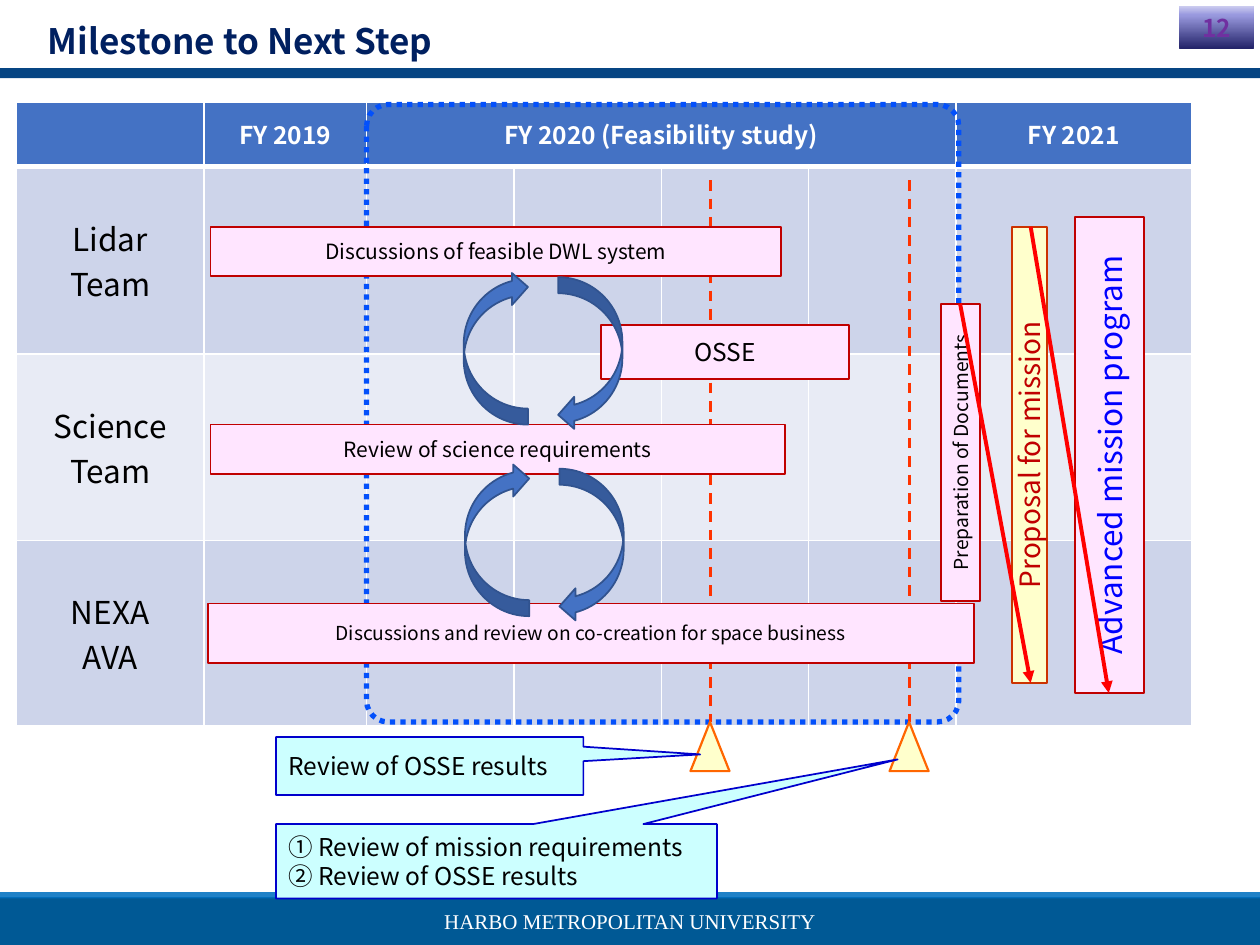
from copy import deepcopy

from pptx import Presentation
from pptx.dml.color import RGBColor
from pptx.enum.dml import MSO_LINE
from pptx.enum.shapes import MSO_CONNECTOR, MSO_SHAPE
from pptx.enum.text import MSO_ANCHOR, PP_ALIGN
from pptx.oxml.ns import qn
from pptx.oxml.xmlchemy import OxmlElement
from pptx.util import Inches, Pt

RECT, ROUNDED = MSO_SHAPE.RECTANGLE, MSO_SHAPE.ROUNDED_RECTANGLE
TRIANGLE, CALLOUT = MSO_SHAPE.ISOSCELES_TRIANGLE, MSO_SHAPE.RECTANGULAR_CALLOUT
TURN = MSO_SHAPE.CURVED_LEFT_ARROW
STRAIGHT = MSO_CONNECTOR.STRAIGHT
DASH, DOT = MSO_LINE.DASH, MSO_LINE.ROUND_DOT
LEFT, CENTER = PP_ALIGN.LEFT, PP_ALIGN.CENTER
MIDDLE, BOTTOM = MSO_ANCHOR.MIDDLE, MSO_ANCHOR.BOTTOM
SANS, SERIF = "Noto Sans CJK JP", "Times New Roman"
PINK, CREAM, BLUE, CRIMSON = "FFE5FF", "FFFFCC", "4472C4", "C00000"
COLUMNS = [1.49, 1.29, 1.17, 1.17, 1.17, 1.17, 1.87]
ROWS = [0.51, 1.49, 1.48, 1.47]


def rgb(value):
    return RGBColor.from_string(value)


def child(parent, tag, **attributes):
    element = OxmlElement(tag)
    for key, value in attributes.items():
        element.set(key, str(value))
    parent.append(element)
    return element


def write(frame, text, size, color, bold=False, align=CENTER, font=SANS):
    frame.text = text
    for paragraph in frame.paragraphs:
        paragraph.alignment = align
        for run in paragraph.runs:
            run.font.name, run.font.size, run.font.bold = font, Pt(size), bold
            run.font.color.rgb = rgb(color)


def draw(shapes, kind, box, fill=None, line=None, width=1):
    shape = shapes.add_shape(kind, *map(Inches, box))
    shape.shadow.inherit = False
    shape.text_frame.vertical_anchor = MIDDLE
    if fill:
        shape.fill.solid()
        shape.fill.fore_color.rgb = rgb(fill)
    else:
        shape.fill.background()
    if line:
        shape.line.color.rgb = rgb(line)
        shape.line.width = Pt(width)
    else:
        shape.line.fill.background()
    return shape


def connect(slide, start, end, color, width):
    line = slide.shapes.add_connector(STRAIGHT, *map(Inches, start + end))
    line.line.color.rgb = rgb(color)
    line.line.width = Pt(width)
    child(line._element.spPr, "a:effectLst")
    return line


def header(slide, left, top, width):
    draw(slide.shapes, RECT, (left, top + 0.54, width, 0.08), "064583")
    badge = draw(slide.shapes, RECT, (left + width - 0.64, top + 0.05, 0.59, 0.34))
    badge.fill.gradient()
    badge.fill.gradient_angle = 90
    stops = badge._element.spPr.find(".//" + qn("a:gsLst"))
    stops.append(deepcopy(stops[-1]))
    shades = [(0, "212167"), (0.8, "9A9ADF"), (1, "CBCBEF")]
    for stop, (position, color) in zip(badge.fill.gradient_stops, shades):
        stop.position = position
        stop.color.rgb = rgb(color)
    write(badge.text_frame, "12", 14, "7030A0", True)

    title = slide.shapes.title
    title.left, title.top = Inches(left + 0.28), Inches(top + 0.01)
    title.width, title.height = Inches(9.45), Inches(0.53)
    title.text_frame.vertical_anchor = BOTTOM
    write(title.text_frame, "Milestone to Next Step", 20, "002060", True, LEFT)
    title.text_frame.paragraphs[0].line_spacing = 0.9


def footer(slide, left, top, width):
    draw(slide.shapes, RECT, (left, top + 0.04, width, 0.38), "005995")
    stripe = draw(slide.shapes, RECT, (left, top, width, 0.05), "0070C0")
    child(stripe._element.spPr.find(".//" + qn("a:srgbClr")), "a:alpha", val=88000)
    box = (left + 1.94, top + 0.1, width - 3.88, 0.28)
    frame = slide.shapes.add_textbox(*map(Inches, box)).text_frame
    frame.word_wrap = True
    frame.vertical_anchor = BOTTOM
    write(frame, "HARBO METROPOLITAN UNIVERSITY", 12, "FFFFFF", font=SERIF)


def border(cell, bottom):
    properties = cell._tc.get_or_add_tcPr()
    for index, side in enumerate(["lnL", "lnR", "lnT", "lnB"]):
        width = bottom if side == "lnB" else 1
        edge = OxmlElement("a:" + side)
        edge.set("w", str(Pt(width)))
        child(child(edge, "a:solidFill"), "a:srgbClr", val="FFFFFF")
        properties.insert(index, edge)


def timetable(slide, left, top):
    box = (left, top, sum(COLUMNS), sum(ROWS))
    table = slide.shapes.add_table(len(ROWS), len(COLUMNS), *map(Inches, box)).table
    for column, width in zip(table.columns, COLUMNS):
        column.width = Inches(width)
    for row, height in zip(table.rows, ROWS):
        row.height = Inches(height)
    fills = [BLUE, "CDD4EA", "E8EBF5", "CDD4EA"]
    for index, (row, fill) in enumerate(zip(table.rows, fills)):
        for cell in row.cells:
            cell.fill.solid()
            cell.fill.fore_color.rgb = rgb(fill)
            cell.vertical_anchor = MIDDLE
            border(cell, 1 if index else 3)
    table.cell(0, 2).merge(table.cell(0, 5))
    years = {1: "FY 2019", 2: "FY 2020 (Feasibility study)", 6: "FY 2021"}
    for column, year in years.items():
        write(table.cell(0, column).text_frame, year, 14, "FFFFFF", True)
    for row, team in enumerate(["Lidar Team", "Science Team", "NEXA\nAVA"], 1):
        write(table.cell(row, 0).text_frame, team, 18, "000000")

    study = (left + sum(COLUMNS[:2]), top + 0.02, sum(COLUMNS[2:6]) + 0.02, 4.9)
    outline = draw(slide.shapes, ROUNDED, study, line="0350FB", width=3)
    outline.adjustments[0] = 0.036
    outline.line.dash_style = DOT


def vertical_bar(slide, text, box, size, color, fill, line):
    x, y, width, height = box
    shift = (height - width) / 2
    turned = (x - shift, y + shift, height, width)
    bar = draw(slide.shapes, RECT, turned, fill, line)
    bar.rotation = 270
    write(bar.text_frame, text, size, color)


def mission_steps(slide, left, top):
    for text, box, *look in [
        ("Proposal for mission", (0.56, 0.08, 0.28, 3.62), 16, CRIMSON, CREAM, "CC3300"),
        ("Preparation of Documents", (0, 0.69, 0.31, 2.36), 11, "000000", PINK, CRIMSON),
        ("Advanced mission program", (1.06, 0, 0.55, 3.78), 18, "0000FF", PINK, CRIMSON),
    ]:
        x, y, width, height = box
        vertical_bar(slide, text, (left + x, top + y, width, height), *look)
    for x1, y1, x2, y2 in [(0.15, 0.69, 0.71, 3.7), (0.71, 0.08, 1.33, 3.78)]:
        start, end = (left + x1, top + y1), (left + x2, top + y2)
        arrow = connect(slide, start, end, "FF0000", 2.25)
        child(arrow.line._get_or_add_ln(), "a:tailEnd", type="triangle")


def review_date(slide, x, top, height):
    connect(slide, (x, top), (x, top + height), "FF3300", 1.5).line.dash_style = DASH
    marker = (x - 0.16, top + height, 0.31, 0.39)
    draw(slide.shapes, TRIANGLE, marker, CREAM, "FF6600", 1.25)


def review_note(slide, text, box, tip):
    note = draw(slide.shapes, CALLOUT, box, "CCFFFF", "0000CC")
    note.adjustments[0], note.adjustments[1] = tip
    write(note.text_frame, text, 14, "000000", align=LEFT)


def activities(slide, left, top):
    for text, x, y, width, height, size in [
        ("Discussions and review on co-creation for space business", 0, 2.99, 6.08, 0.47, 11),
        ("Review of science requirements", 0.02, 1.57, 4.56, 0.39, 12),
        ("OSSE", 3.12, 0.78, 1.97, 0.43, 14),
        ("Discussions of feasible DWL system", 0.02, 0, 4.53, 0.39, 12),
    ]:
        box = (left + x, top + y, width, height)
        bar = draw(slide.shapes, RECT, box, PINK, CRIMSON)
        write(bar.text_frame, text, size, "000000")


def cycle(slide, left, top):
    group = slide.shapes.add_group_shape()
    for x, y, angle in [(0.75, 0.05, 0), (0, 0, 180)]:
        box = (left + x, top + y, 0.51, 1.22)
        draw(group.shapes, TURN, box, BLUE, "31538F").rotation = angle


def main():
    deck = Presentation()
    deck.slide_width, deck.slide_height = Inches(10), Inches(7.5)
    slide = deck.slides.add_slide(deck.slide_layouts[5])
    footer(slide, 0, 7.08, 10)
    header(slide, 0, 0, 10)
    timetable(slide, 0.13, 0.81)
    for x in (7.22, 5.64):
        review_date(slide, x, 1.43, 4.3)
    mission_steps(slide, 7.47, 1.72)
    review_note(slide, "① Review of mission requirements\n② Review of OSSE results",
                (2.19, 6.54, 3.5, 0.59), (0.91, -1.37))
    review_note(slide, "Review of OSSE results", (2.19, 5.85, 2.44, 0.46), (0.88, -0.2))
    activities(slide, 1.65, 1.8)
    cycle(slide, 3.68, 2.15)
    cycle(slide, 3.69, 3.67)
    deck.save("out.pptx")


if __name__ == "__main__":
    main()
